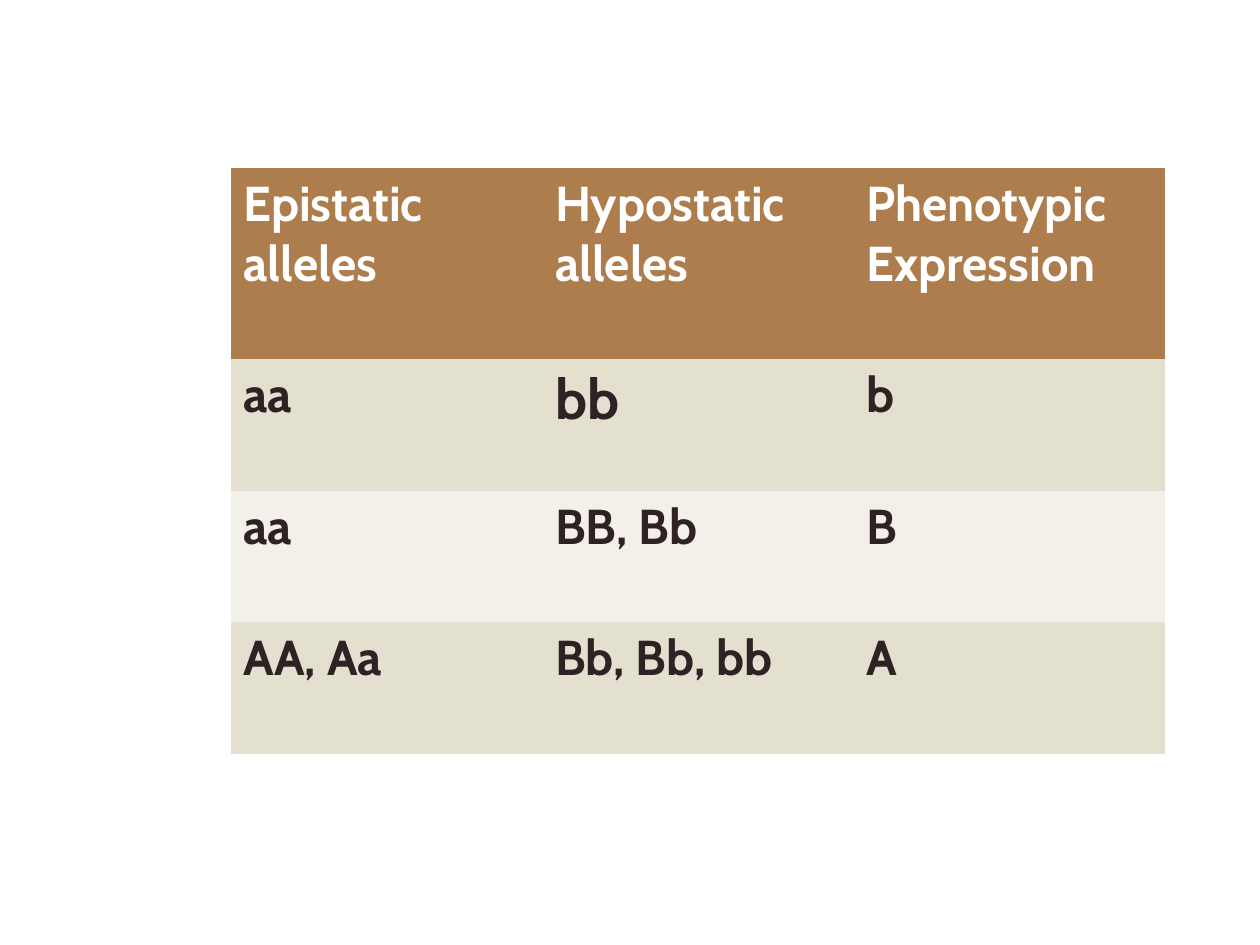
from pptx import Presentation
from pptx.dml.color import RGBColor
from pptx.util import Pt

BLANK_LAYOUT = 6
NO_STYLE_NO_GRID = "{2D5ABB26-0587-4C30-8999-92F81FD0307C}"


def color(hex_code):
    return RGBColor.from_string(hex_code)


def write(cell, text, size=28, ink="2E2224", fill="E3E0D0"):
    cell.fill.solid()
    cell.fill.fore_color.rgb = color(fill)
    cell.text = text
    for line in cell.text_frame.paragraphs:
        for run in line.runs:
            run.font.name = "Cabin"
            run.font.size = Pt(size)
            run.font.bold = True
            run.font.color.rgb = color(ink)


prs = Presentation()
prs.slide_width, prs.slide_height = Pt(720), Pt(540)
slide = prs.slides.add_slide(prs.slide_layouts[BLANK_LAYOUT])

headings = ["Epistatic\nalleles", "Hypostatic\nalleles", "Phenotypic\nExpression"]
crosses = [
    ["aa", "bb", "b"],
    ["aa", "BB, Bb", "B"],
    ["AA, Aa", "Bb, Bb, bb", "A"],
]
band_fills = ["E3E0D0", "F2F0E9"]
column_width, heading_height, cross_height = 178, 109.2, 75.2

epistasis_frame = slide.shapes.add_table(
    len(crosses) + 1, len(headings), Pt(132), Pt(96),
    Pt(column_width * len(headings)),
    Pt(heading_height + cross_height * len(crosses)))
epistasis = epistasis_frame.table
epistasis_frame._element.xpath(".//a:tableStyleId")[0].text = NO_STYLE_NO_GRID

epistasis.rows[0].height = Pt(heading_height)
for col, heading in enumerate(headings):
    epistasis.columns[col].width = Pt(column_width)
    write(epistasis.cell(0, col), heading, ink="FFFFFF", fill="AD7D4D")

for row, alleles in enumerate(crosses):
    epistasis.rows[row + 1].height = Pt(cross_height)
    for col, genotype in enumerate(alleles):
        write(epistasis.cell(row + 1, col), genotype,
              size=32 if genotype == "bb" else 28, fill=band_fills[row % 2])

prs.save("out.pptx")
